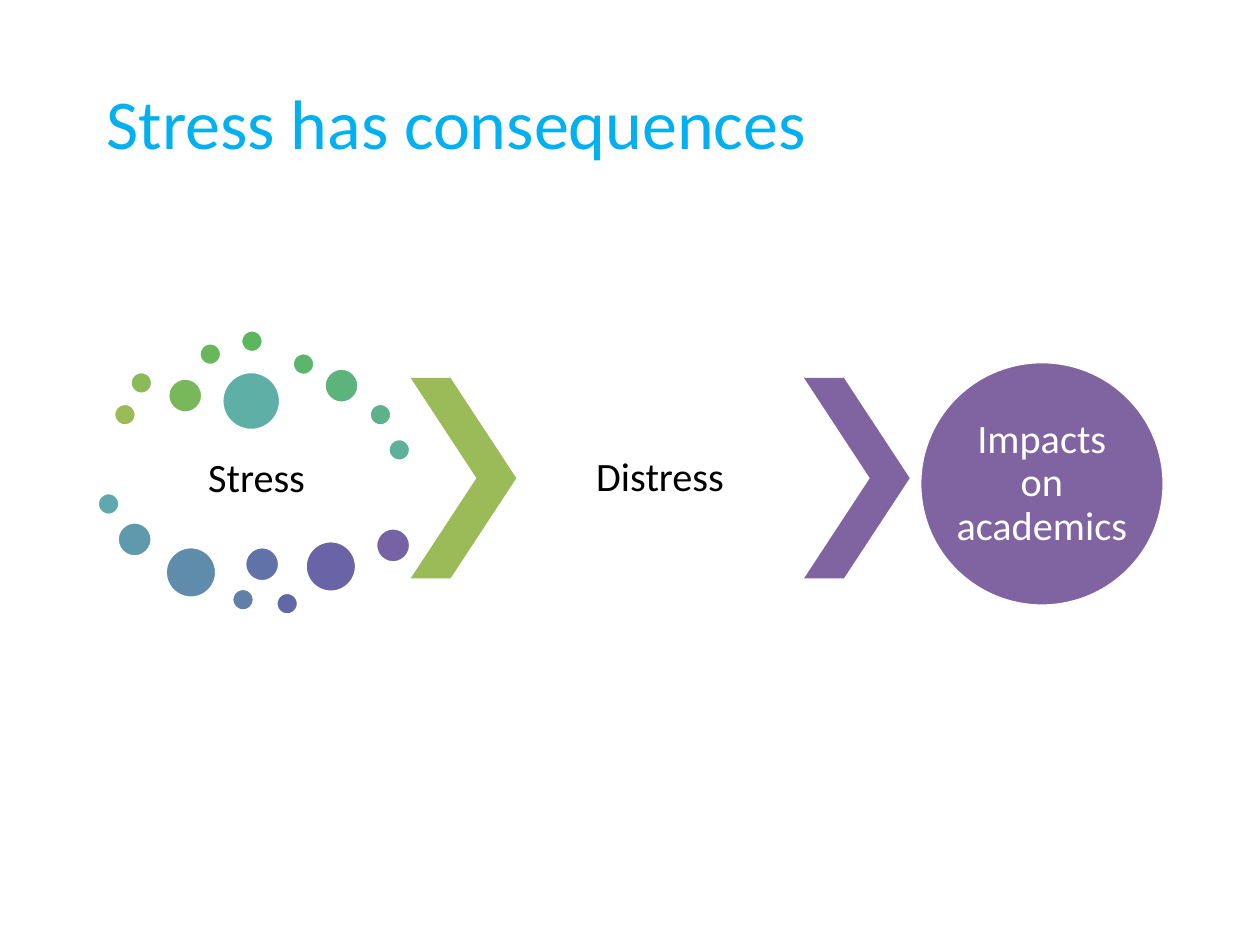
from pptx import Presentation
from pptx.dml.color import RGBColor
from pptx.enum import shapes, text
from pptx.util import Cm, Pt

SKY = RGBColor(0x00, 0xB0, 0xF0)
GREEN = RGBColor(0x9B, 0xBB, 0x59)
PURPLE = RGBColor(0x80, 0x64, 0xA2)
BLACK = RGBColor(0x00, 0x00, 0x00)
WHITE = RGBColor(0xFF, 0xFF, 0xFF)

TITLE = "Stress has consequences"
CAUSE, STATE, OUTCOME = "Stress", "Distress", "Impacts on academics"

# Dot diameters in cm
SMALL, MEDIUM, LARGE, LARGEST = 0.46, 0.71, 1.04, 1.19

# Dots around the cause: left, top (cm), diameter, colour from green to purple
DOTS = [
    (2.29, 8.13, SMALL, "9BBB59"),
    (2.62, 7.49, SMALL, "8ABA5A"),
    (3.38, 7.62, MEDIUM, "79B85A"),
    (4.01, 6.91, SMALL, "69B75B"),
    (4.85, 6.65, SMALL, "5BB65D"),
    (5.89, 7.11, SMALL, "5CB46D"),
    (6.53, 7.42, MEDIUM, "5CB37C"),
    (7.44, 8.13, SMALL, "5DB28B"),
    (7.82, 8.84, SMALL, "5EB099"),
    (4.47, 7.49, LARGEST, "5EAFA6"),
    (1.96, 9.93, SMALL, "5FA8AD"),
    (2.36, 10.52, MEDIUM, "5F9AAC"),
    (3.33, 11.02, LARGE, "608CAB"),
    (4.67, 11.86, SMALL, "617FA9"),
    (4.93, 11.02, MEDIUM, "6172A8"),
    (5.56, 11.94, SMALL, "6267A6"),
    (6.15, 10.9, LARGE, "6A63A5"),
    (7.57, 10.64, MEDIUM, "7563A3"),
]

# The chevron - label - chevron row, in cm
ROW_LEFT, ROW_TOP, ROW_HEIGHT = 8.28, 7.62, 4.04
CHEVRON_WIDTH, STATE_WIDTH = 2.13, 5.8
CHEVRON_POINT = 0.623


def write(frame, words, size, colour, align, inset):
    margins = {f"margin_{side}": Cm(inset) for side in ("left", "right", "top", "bottom")}
    settings = {"word_wrap": True, "auto_size": text.MSO_AUTO_SIZE.NONE,
                "vertical_anchor": text.MSO_ANCHOR.MIDDLE, **margins}
    for name, value in settings.items():
        setattr(frame, name, value)
    frame.text = words
    paragraph = frame.paragraphs[0]
    paragraph.alignment = align
    for name, value in {"name": "Calibri", "size": Pt(size)}.items():
        setattr(paragraph.font, name, value)
    paragraph.font.color.rgb = colour
    return paragraph


def write_label(frame, words, colour=BLACK, inset=0.08):
    write(frame, words, 23, colour, text.PP_ALIGN.CENTER, inset).line_spacing = 0.9


def add_label(slide, words, left, top, width, height):
    box = slide.shapes.add_textbox(Cm(left), Cm(top), Cm(width), Cm(height))
    write_label(box.text_frame, words)


def add_filled(slide, preset, left, top, width, height, colour):
    shape = slide.shapes.add_shape(preset, Cm(left), Cm(top), Cm(width), Cm(height))
    shape.shadow.inherit = False
    shape.fill.solid()
    shape.fill.fore_color.rgb = colour
    shape.line.fill.background()
    return shape


def add_circle(slide, left, top, diameter, colour):
    circle = add_filled(slide, shapes.MSO_SHAPE.OVAL, left, top, diameter, diameter, colour)
    circle.line.color.rgb = WHITE
    circle.line.width = Pt(2)
    return circle


def add_chevron(slide, left, colour):
    chevron = add_filled(slide, shapes.MSO_SHAPE.CHEVRON, left, ROW_TOP,
                         CHEVRON_WIDTH, ROW_HEIGHT, colour)
    chevron.adjustments[0] = CHEVRON_POINT


def main():
    deck = Presentation()
    deck.slide_width, deck.slide_height = Cm(25.4), Cm(19.05)
    slide = deck.slides.add_slide(deck.slide_layouts[0])

    subtitle = slide.placeholders[1].element
    subtitle.getparent().remove(subtitle)
    title = slide.shapes.title
    place = {"left": 1.9, "top": 1.45, "width": 14.83, "height": 2}
    for name, value in place.items():
        setattr(title, name, Cm(value))
    write(title.text_frame, TITLE, 40, SKY, text.PP_ALIGN.LEFT, 0.25)

    add_label(slide, CAUSE, 2.29, 8.71, 5.77, 1.9)
    for left, top, diameter, colour in DOTS:
        add_circle(slide, left, top, diameter, RGBColor.from_string(colour))

    state_left = ROW_LEFT + CHEVRON_WIDTH
    add_chevron(slide, ROW_LEFT, GREEN)
    add_label(slide, STATE, state_left, ROW_TOP, STATE_WIDTH, ROW_HEIGHT)
    add_chevron(slide, state_left + STATE_WIDTH, PURPLE)

    outcome = add_circle(slide, 18.54, 7.29, 4.93, PURPLE)
    write_label(outcome.text_frame, OUTCOME, WHITE, inset=0)

    deck.save("out.pptx")


if __name__ == "__main__":
    main()
